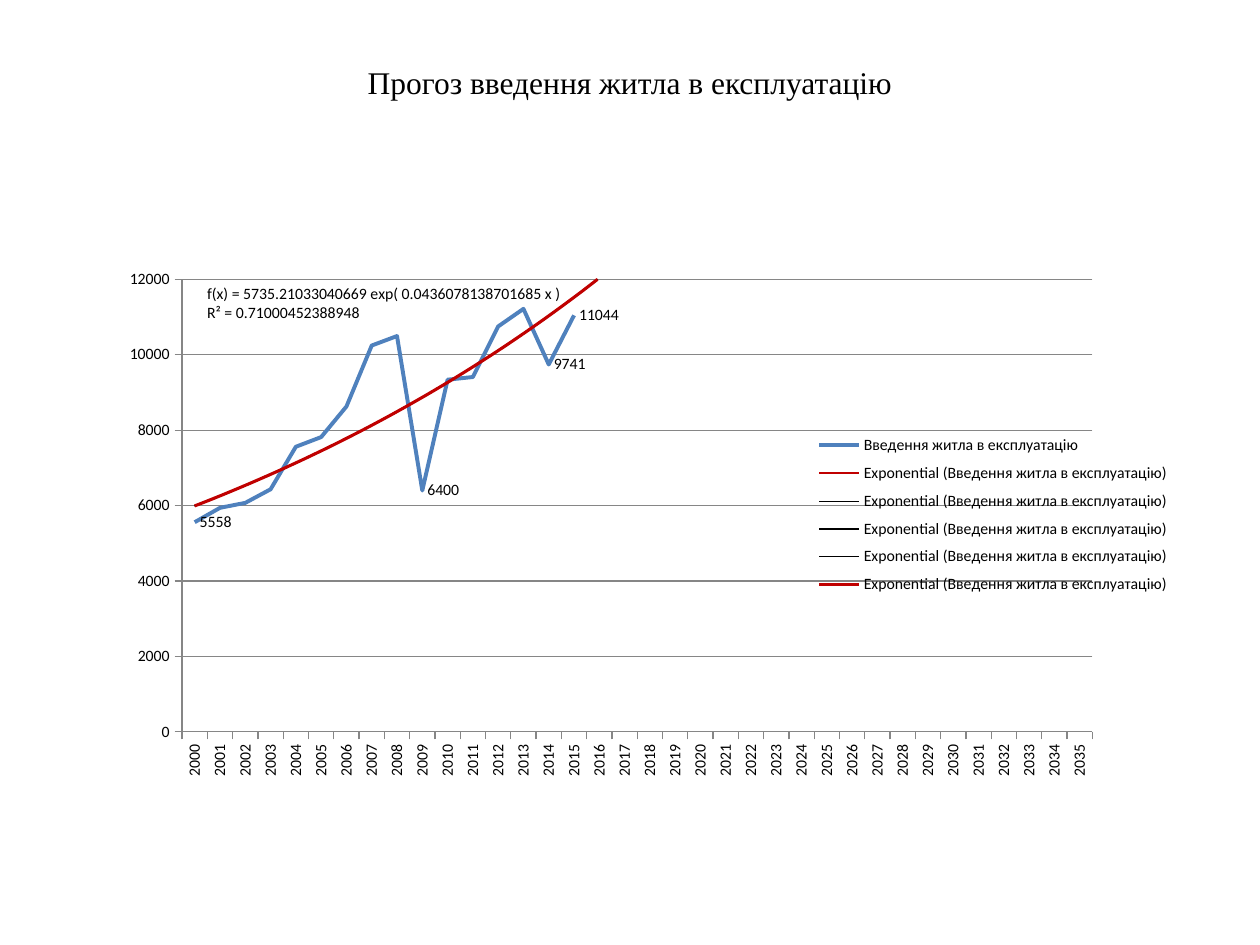
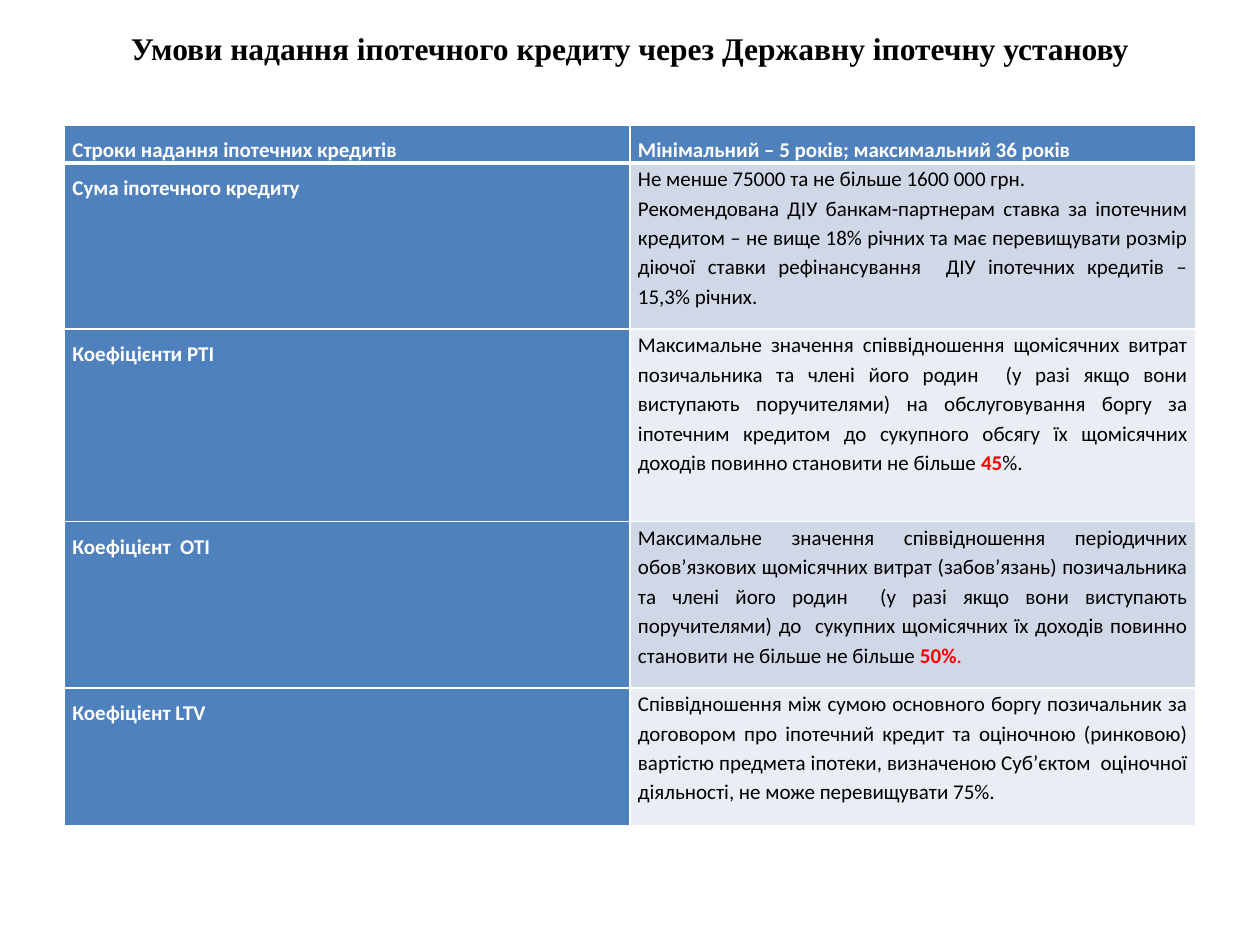
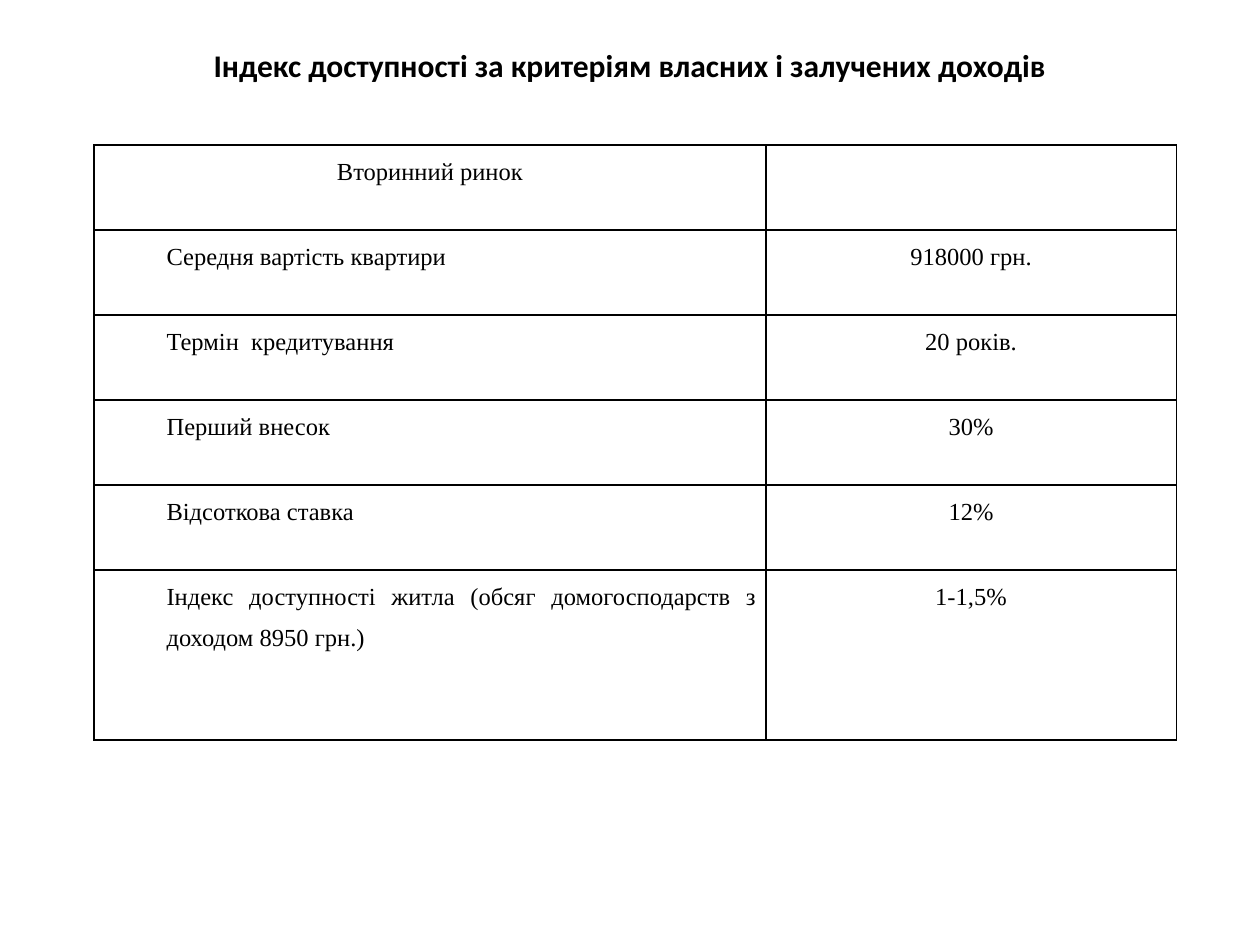
from lxml import etree
from pptx import Presentation
from pptx.chart.data import CategoryChartData
from pptx.dml.color import RGBColor
from pptx.enum.chart import XL_CHART_TYPE, XL_LABEL_POSITION, XL_LEGEND_POSITION, XL_TICK_MARK
from pptx.enum.text import MSO_ANCHOR, PP_ALIGN
from pptx.oxml import parse_xml
from pptx.oxml.ns import nsdecls, qn
from pptx.util import Pt

LINE = XL_CHART_TYPE.LINE
LABEL_RIGHT = XL_LABEL_POSITION.RIGHT
LEGEND_RIGHT = XL_LEGEND_POSITION.RIGHT
TICK_OUTSIDE = XL_TICK_MARK.OUTSIDE
MIDDLE = MSO_ANCHOR.MIDDLE
CENTER, JUSTIFY = PP_ALIGN.CENTER, PP_ALIGN.JUSTIFY

BLACK = RGBColor(0x00, 0x00, 0x00)
WHITE = RGBColor(0xFF, 0xFF, 0xFF)
RED = RGBColor(0xFF, 0x00, 0x00)
DARK_RED = RGBColor(0xC0, 0x00, 0x00)
BLUE = RGBColor(0x4F, 0x81, 0xBD)
BAND_DARK = RGBColor(0xD0, 0xD8, 0xE8)
BAND_LIGHT = RGBColor(0xE9, 0xED, 0xF4)
GRAY = RGBColor(0x86, 0x86, 0x86)

SERIF, SANS = "Times New Roman", "Calibri"


def add_title(slide, text, height, bottom_margin, font_name, bold):
    box = slide.shapes.add_textbox(Pt(36), Pt(21.6), Pt(648), Pt(height))
    frame = box.text_frame
    frame.word_wrap = True
    frame.vertical_anchor = MIDDLE
    frame.margin_top, frame.margin_bottom = 0, Pt(bottom_margin)
    paragraph = frame.paragraphs[0]
    paragraph.alignment = CENTER
    run = paragraph.add_run()
    run.text = text
    for name, value in {"name": font_name, "size": Pt(18), "bold": bold}.items():
        setattr(run.font, name, value)
    run.font.color.rgb = BLACK


def format_cell(cell, paragraphs, style, borders):
    cell.margin_left = cell.margin_right = Pt(style["inset"])
    cell.margin_top = cell.margin_bottom = 0
    for index, runs in enumerate(paragraphs):
        frame = cell.text_frame
        paragraph = frame.add_paragraph() if index else frame.paragraphs[0]
        paragraph.alignment = style["alignment"]
        paragraph.line_spacing = style["spacing"]
        if style["indent"]:
            paragraph._p.get_or_add_pPr().set("marL", str(Pt(style["indent"])))
        for text, color, bold in runs:
            run = paragraph.add_run()
            run.text = text
            for name, value in {"name": style["font"], "size": Pt(style["size"]), "bold": bold}.items():
                setattr(run.font, name, value)
            run.font.color.rgb = color
    properties = cell._tc.get_or_add_tcPr()
    for side in ("L", "R", "T", "B"):
        line = etree.SubElement(properties, qn(f"a:ln{side}"), w=str(Pt(borders.get(side, 1))))
        fill = etree.SubElement(line, qn("a:solidFill"))
        etree.SubElement(fill, qn("a:srgbClr"), val=str(style["border"]))
    if style["fill"] is None:
        cell.fill.background()
    else:
        cell.fill.solid()
        cell.fill.fore_color.rgb = style["fill"]


presentation = Presentation()
presentation.slide_width, presentation.slide_height = Pt(720), Pt(540)
forecast_slide, terms_slide, index_slide = [
    presentation.slides.add_slide(presentation.slide_layouts[6]) for _ in range(3)
]

add_title(forecast_slide, "Прогоз введення житла в експлуатацію", 50, 0, SERIF, False)

housing = [5558, 5939, 6073, 6433, 7560, 7816, 8628, 10244,
           10496, 6400, 9339, 9410, 10750, 11217, 9741, 11044]
years = range(2000, 2036)
chart_data = CategoryChartData()
chart_data.categories = [str(year) for year in years]
chart_data.add_series("Введення житла в експлуатацію",
                      housing + [None] * (len(years) - len(housing)))
chart = forecast_slide.shapes.add_chart(
    LINE, Pt(65.5), Pt(130.3), Pt(612), Pt(315.4), chart_data).chart
chart.has_title = False
chart.font.name, chart.font.size = SANS, Pt(9)
chart.font.color.rgb = BLACK
chart.plots[0].vary_by_categories = False

for axis in (chart.category_axis, chart.value_axis):
    axis.major_tick_mark = TICK_OUTSIDE
    axis.format.line.color.rgb = GRAY
    axis.format.line.width = Pt(0.75)
chart.value_axis.minimum_scale, chart.value_axis.maximum_scale = 0, 12000
chart.value_axis.major_unit = 2000
chart.value_axis.has_major_gridlines = True
gridline = chart.value_axis.major_gridlines.format.line
gridline.color.rgb, gridline.width = GRAY, Pt(0.75)
year_labels = chart.category_axis.tick_labels
year_labels.font.size = Pt(9)
chart.category_axis._element.find(qn("c:txPr")).find(qn("a:bodyPr")).set("rot", "-5400000")

series = chart.plots[0].series[0]
series.smooth = False
series.format.line.color.rgb = BLUE
series.format.line.width = Pt(2.25)
series.marker.format.fill.background()
series._element.find(qn("c:marker")).insert(0, parse_xml(f'<c:symbol {nsdecls("c")} val="none"/>'))
series.data_labels.show_value = False
for year in (2000, 2009, 2014, 2015):
    series.points[year - years[0]].data_label.position = LABEL_RIGHT

layout = ('<c:layout><c:manualLayout>{target}<c:xMode val="edge"/><c:yMode val="edge"/>'
          '<c:x val="{x}"/><c:y val="{y}"/>{size}</c:manualLayout></c:layout>')
equation_label = ("<c:trendlineLbl>" + layout.format(target="", x=0.08, y=0.11, size="")
                  + '<c:numFmt formatCode="General" sourceLinked="0"/></c:trendlineLbl>')
categories = series._element.find(qn("c:cat"))
trendlines = [(DARK_RED, 1, False), (BLACK, 0.5, False), (BLACK, 1, False),
              (BLACK, 0.5, False), (DARK_RED, 1.75, True)]
for color, width, has_equation in trendlines:
    forward = '<c:forward val="20"/>' if has_equation else ""
    categories.addprevious(parse_xml(
        f'<c:trendline {nsdecls("c", "a")}><c:spPr><a:ln w="{Pt(width)}"><a:solidFill>'
        f'<a:srgbClr val="{color}"/></a:solidFill></a:ln></c:spPr>'
        f'<c:trendlineType val="exp"/>{forward}<c:dispRSqr val="{int(has_equation)}"/>'
        f'<c:dispEq val="{int(has_equation)}"/>{equation_label if has_equation else ""}'
        "</c:trendline>"))

chart.has_legend = True
legend = chart.legend
legend.position = LEGEND_RIGHT
legend.include_in_layout = False
placements = [
    (chart.plots[0]._element.getparent(), 0, '<c:layoutTarget val="inner"/>', 0.063, 0.093, 0.851, 0.816),
    (legend._element, 1, "", 0.65, 0.36, 0.34, 0.32),
]
for parent, position, target, left, top, width, height in placements:
    for old_layout in parent.findall(qn("c:layout")):
        parent.remove(old_layout)
    size = f'<c:w val="{width:.2f}"/><c:h val="{height:.2f}"/>'
    markup = layout.format(target=target, x=left, y=top, size=size)
    parent.insert(position, parse_xml(markup.replace("<c:layout>", f'<c:layout {nsdecls("c")}>', 1)))

add_title(terms_slide, "Умови надання іпотечного кредиту через Державну іпотечну установу",
          33, 21, SERIF, True)
terms = [
    ("Строки надання іпотечних кредитів", 21,
     [[("Мінімальний – 5 років; максимальний 36 років", WHITE, True)]]),
    ("Сума іпотечного кредиту", 95,
     [[("Не менше 75000 та не більше 1600 000 грн.", BLACK, False)],
      [("Рекомендована ДІУ банкам-партнерам ставка за іпотечним кредитом – не вище 18% річних "
        "та має перевищувати розмір діючої ставки рефінансування  ДІУ іпотечних кредитів – "
        "15,3% річних.", BLACK, False)]]),
    ("Коефіцієнти РТІ", 110,
     [[("Максимальне значення співвідношення щомісячних витрат позичальника та члені його родин  "
        "(у разі якщо вони виступають поручителями) на обслуговування боргу за іпотечним кредитом "
        "до сукупного обсягу їх щомісячних доходів повинно становити не більше ", BLACK, False),
       ("45", RED, True), ("%.", BLACK, False)]]),
    ("Коефіцієнт  ОТІ", 95,
     [[("Максимальне значення співвідношення періодичних обов’язкових щомісячних витрат "
        "(забов’язань) позичальника та члені його родин  (у разі якщо вони виступають "
        "поручителями) до  сукупних щомісячних їх доходів повинно становити не більше "
        "не більше ", BLACK, False),
       ("50%", RED, True), (".", RED, False)]]),
    ("Коефіцієнт LTV", 79,
     [[("Співвідношення між сумою основного боргу позичальник за договором про іпотечний кредит "
        "та оціночною (ринковою) вартістю предмета іпотеки, визначеною Суб’єктом  оціночної "
        "діяльності, не може перевищувати 75%.", BLACK, False)]]),
]
terms_table = terms_slide.shapes.add_table(
    len(terms), 2, Pt(36.9), Pt(71.5), Pt(646.4), Pt(400)).table
terms_table.first_row = terms_table.horz_banding = False
for column in terms_table.columns:
    column.width = Pt(323.2)
heading_style = {"font": SANS, "size": 12, "alignment": JUSTIFY, "spacing": 1.5, "indent": 0,
                 "inset": 4.5, "fill": BLUE, "border": WHITE}
for row, (heading, height, paragraphs) in enumerate(terms):
    terms_table.rows[row].height = Pt(height)
    borders = {0: {"B": 3}, 1: {"T": 3}}.get(row, {})
    band = BAND_DARK if row % 2 else BAND_LIGHT
    body_style = {**heading_style, "spacing": 1.15, "fill": band} if row else heading_style
    format_cell(terms_table.cell(row, 0), [[(heading, WHITE, True)]], heading_style, borders)
    format_cell(terms_table.cell(row, 1), paragraphs, body_style, borders)

add_title(index_slide, "Індекс доступності за критеріям власних і залучених доходів",
          52, 21, SANS, True)
indicators = [
    ("Вторинний ринок", ""),
    ("Середня вартість квартири", "918000 грн."),
    ("Термін  кредитування", "20 років."),
    ("Перший внесок", "30%"),
    ("Відсоткова ставка", "12%"),
    ("Індекс доступності житла (обсяг домогосподарств з доходом 8950 грн.)", "1-1,5%"),
]
index_table = index_slide.shapes.add_table(
    len(indicators), 2, Pt(53.8), Pt(82.8), Pt(618.4), Pt(340)).table
index_table.first_row = index_table.horz_banding = False
index_table.columns[0].width, index_table.columns[1].width = Pt(383.8), Pt(234.6)
value_style = {"font": SERIF, "size": 14, "alignment": CENTER, "spacing": 1.5, "indent": 0,
               "inset": 5.4, "fill": None, "border": BLACK}
name_style = {**value_style, "alignment": JUSTIFY, "indent": 36}
for row, (indicator, value) in enumerate(indicators):
    index_table.rows[row].height = Pt(97.2 if row == len(indicators) - 1 else 48.6)
    format_cell(index_table.cell(row, 0), [[(indicator, BLACK, False)]],
                name_style if row else value_style, {})
    format_cell(index_table.cell(row, 1), [[(value, BLACK, False)]] if value else [],
                value_style, {})

presentation.save("out.pptx")
